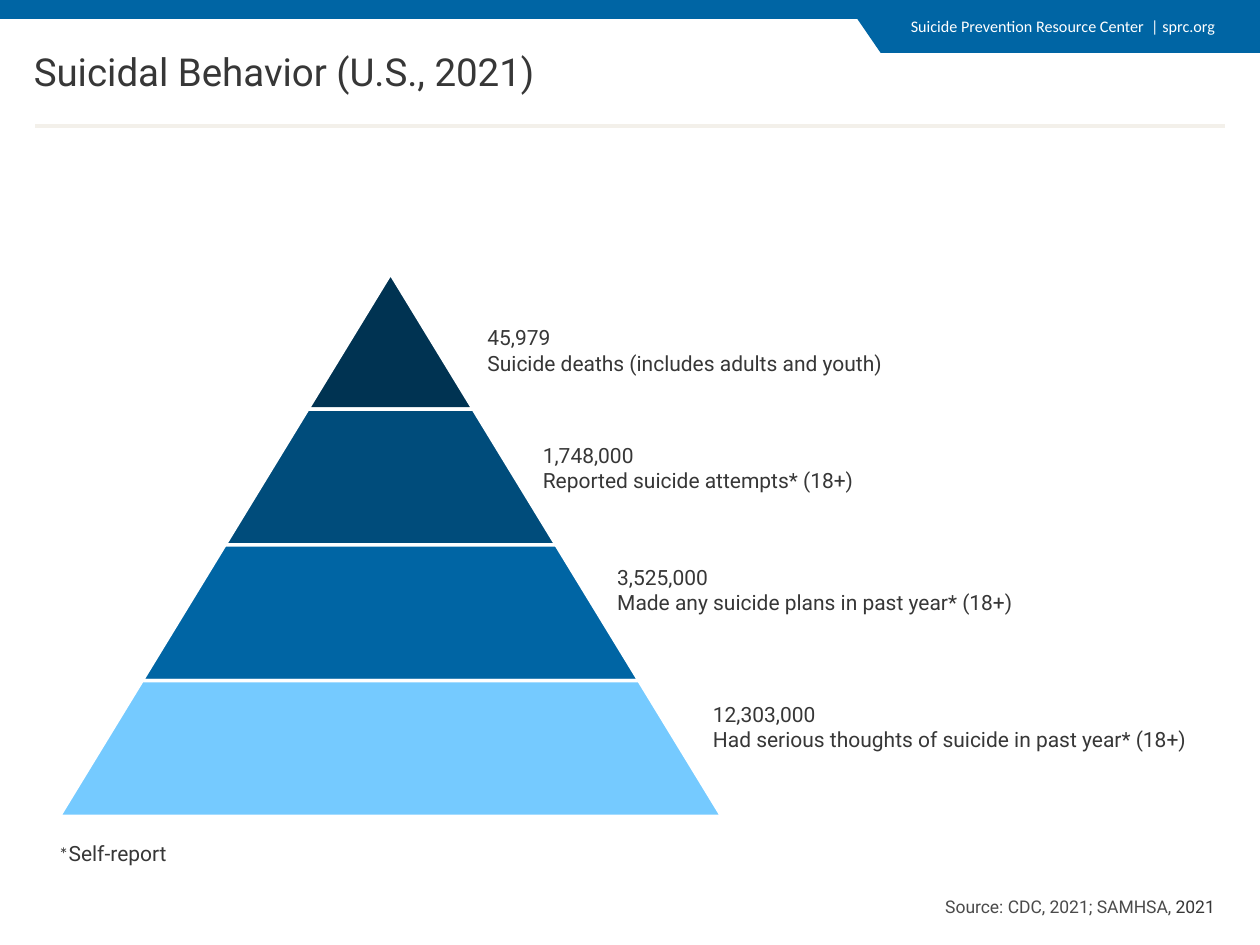
from lxml import etree
from pptx import Presentation
from pptx.dml.color import RGBColor
from pptx.enum.shapes import MSO_CONNECTOR as Connector, MSO_SHAPE as Shape
from pptx.enum.text import PP_ALIGN as Align
from pptx.oxml.ns import qn
from pptx.util import Inches, Pt

WHITE = RGBColor(0xFF, 0xFF, 0xFF)
BLUE = RGBColor(0x00, 0x65, 0xA4)
INK = RGBColor(0x37, 0x37, 0x37)
GRAY = RGBColor(0x4B, 0x4B, 0x4B)
RULE = RGBColor(0xF3, 0xF0, 0xEA)
NAVY = RGBColor(0x00, 0x33, 0x52)
DEEP_BLUE = RGBColor(0x00, 0x4C, 0x7B)
SKY = RGBColor(0x75, 0xCA, 0xFF)

# Tier colour, label left, label top, label width, number, meaning
TIERS = [
    (NAVY, 3.77, 2.53, 4.05, "45,979", "Suicide deaths (includes adults and youth)"),
    (DEEP_BLUE, 4.21, 3.46, 3.18, "1,748,000", "Reported suicide attempts* (18+)"),
    (BLUE, 4.8, 4.43, 3.95, "3,525,000", "Made any suicide plans in past year* (18+)"),
    (SKY, 5.56, 5.52, 4.09, "12,303,000",
     "Had serious thoughts of suicide in past year* (18+)"),
]


def add_text(page, left, top, width, height, paragraphs, align=Align.LEFT):
    """Each paragraph is a list of (text, size, colour, font name) spans."""
    box = page.shapes.add_textbox(Inches(left), Inches(top), Inches(width), Inches(height))
    frame = box.text_frame
    frame.word_wrap = True
    for index, spans in enumerate(paragraphs):
        para = frame.add_paragraph() if index else frame.paragraphs[0]
        para.alignment = align
        for text, size, colour, font_name in spans:
            span = para.add_run()
            span.text = text
            span.font.size = Pt(size)
            span.font.name = font_name
            span.font.color.rgb = colour


def paint(shape, colour):
    shape.shadow.inherit = False
    shape.fill.solid()
    shape.fill.fore_color.rgb = colour
    shape.line.fill.background()


def add_banner(page, left, top, width):
    bar = page.shapes.add_shape(Shape.RECTANGLE, Inches(left), Inches(top),
                                Inches(width), Inches(0.15))
    paint(bar, BLUE)
    right = left + width
    tab_top, tab_bottom = top + 0.1, top + 0.42
    corners = [(right, tab_top), (right, tab_bottom),
               (right - 3.01, tab_bottom), (right - 3.23, tab_top)]
    points = [(Inches(x), Inches(y)) for x, y in corners]
    builder = page.shapes.build_freeform(*points[0])
    builder.add_line_segments(points[1:], close=True)
    paint(builder.convert_to_shape(), BLUE)
    add_text(page, right - 2.87, top + 0.08, 2.95, 0.41,
             [[("Suicide Prevention Resource Center\u00a0 | sprc.org", 9.2, WHITE, "Calibri")]])


def add_heading(page, left, top, width):
    add_text(page, left - 0.11, top, 4.83, 0.47,
             [[("Suicidal Behavior (U.S., 2021)", 22, INK, "Roboto")]])
    rule_y = Inches(top + 0.67)
    rule = page.shapes.add_connector(Connector.STRAIGHT, Inches(left), rule_y,
                                     Inches(left + width), rule_y)
    rule.line.color.rgb = RULE
    rule.line.width = Pt(2.25)
    etree.SubElement(rule._element.spPr, qn("a:effectLst"))


def add_pyramid(page, left, top, width, height):
    tier_height = height / len(TIERS)
    step = width / len(TIERS)
    slope = step / 2 / tier_height
    for index, (colour, *_) in enumerate(TIERS):
        tier_width = step * (index + 1)
        tier = page.shapes.add_shape(
            Shape.TRAPEZOID, Inches(left + (width - tier_width) / 2),
            Inches(top + index * tier_height), Inches(tier_width), Inches(tier_height))
        paint(tier, colour)
        tier.adjustments[0] = slope
        tier.line.color.rgb = WHITE
        tier.line.width = Pt(2)


def add_tier_labels(page):
    for _, left, top, width, number, meaning in TIERS:
        add_text(page, left, top, width, 0.5,
                 [[(line, 12, INK, "Roboto")] for line in (number, meaning)])


def add_notes_and_source(page, left, top, right):
    add_text(page, left, top, 2.43, 0.3,
             [[("*", 11, INK, "Calibri"), ("Self-report", 12, INK, "Roboto")]])
    add_text(page, right - 4.48, top + 0.44, 4.48, 0.27,
             [[("Source: CDC, 2021; SAMHSA, ", 10, GRAY, "Roboto"),
               ("2021", 10, INK, "Roboto")]], Align.RIGHT)


def main():
    deck = Presentation()
    deck.slide_width, deck.slide_height = Inches(10), Inches(7.5)
    page = deck.slides.add_slide(deck.slide_layouts[6])
    add_banner(page, 0, 0, 10)
    add_heading(page, 0.28, 0.33, 9.44)
    add_pyramid(page, 0.47, 2.17, 5.26, 4.31)
    add_tier_labels(page)
    add_notes_and_source(page, 0.37, 6.62, 9.74)
    deck.save("out.pptx")


if __name__ == "__main__":
    main()
